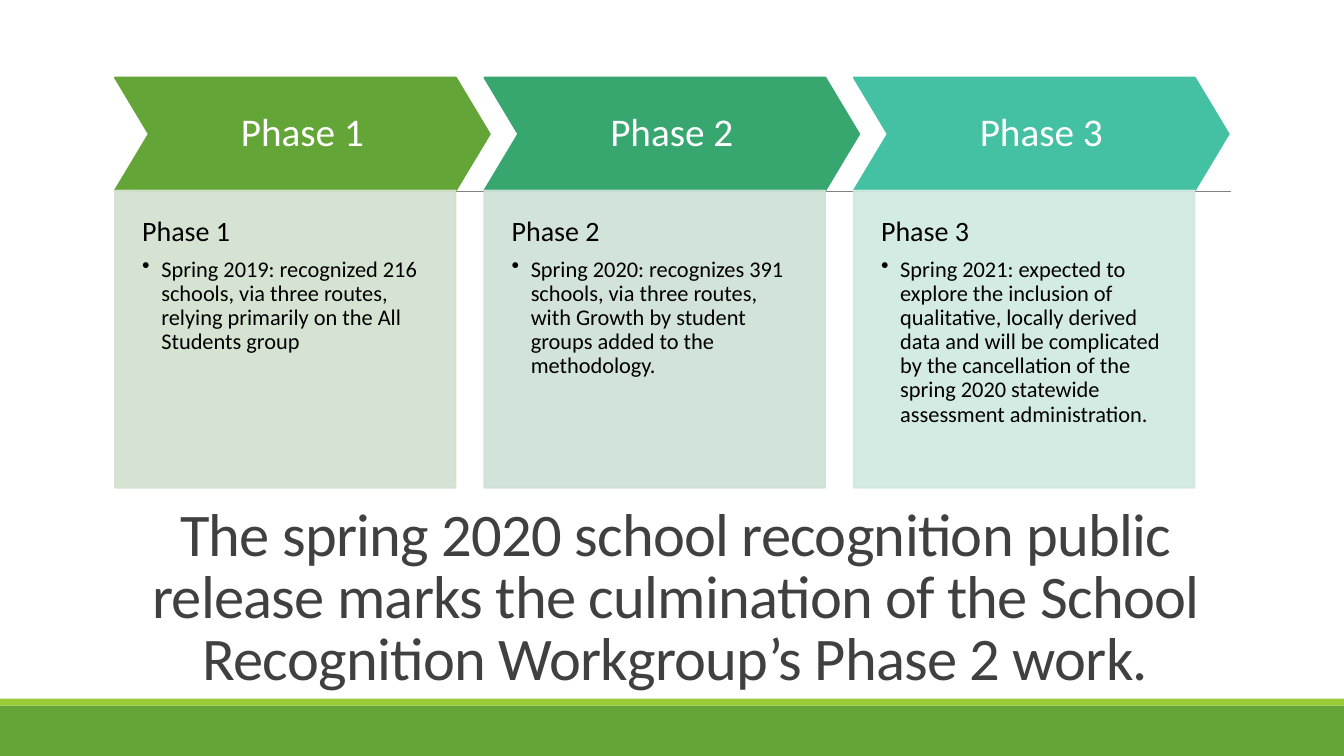
from dataclasses import dataclass

from lxml import etree
from pptx import Presentation
from pptx.dml.color import RGBColor
from pptx.enum.shapes import MSO_CONNECTOR, MSO_SHAPE
from pptx.enum.text import MSO_ANCHOR, PP_ALIGN
from pptx.oxml.ns import qn
from pptx.shapes.autoshape import Shape
from pptx.slide import Slide
from pptx.text.text import TextFrame
from pptx.util import Emu, Inches, Pt

RECTANGLE, CHEVRON = MSO_SHAPE.RECTANGLE, MSO_SHAPE.CHEVRON
STRAIGHT = MSO_CONNECTOR.STRAIGHT
TOP, MIDDLE = MSO_ANCHOR.TOP, MSO_ANCHOR.MIDDLE
LEFT, CENTER = PP_ALIGN.LEFT, PP_ALIGN.CENTER

SLIDE_WIDTH, SLIDE_HEIGHT = Inches(13.33), Inches(7.5)
FONT = "Calibri"
COLORS = {
    "footer": "63A537", "stripe": "99CB38", "rule": "808080",
    "title": "404040", "header": "FFFFFF", "body": "000000",
}
TITLE = ("The spring 2020 school recognition public release marks the "
         "culmination of the School Recognition Workgroup’s Phase 2 work.")


@dataclass(frozen=True)
class Area:
    """A box in percent of the slide's width and height."""
    left: float
    top: float
    width: float
    height: float

    def box(self, column: int = 0) -> tuple[Emu, Emu, Emu, Emu]:
        left = self.left + column * COLUMN_PITCH
        return (across(left), down(self.top), across(self.width), down(self.height))


@dataclass(frozen=True)
class Phase:
    name: str
    detail: str
    chevron_color: str
    panel_color: str


COLUMN_PITCH = 27.49
CHEVRON_AREA = Area(8.55, 10.27, 27.9, 14.93)
PANEL_AREA = Area(8.55, 25.2, 25.35, 39.33)
TITLE_AREA = Area(9, 70.67, 82.5, 17.33)
FOOTER_AREA = Area(0, 93.33, 100, 6.67)
STRIPE_AREA = Area(0, 92.4, 100, 0.93)
RULE_AREA = Area(9.83, 25.33, 81.77, 0)

PHASES = [
    Phase("Phase 1", "Spring 2019: recognized 216 schools, via three routes, relying "
          "primarily on the All Students group", "63A537", "D3E1CE"),
    Phase("Phase 2", "Spring 2020: recognizes 391 schools, via three routes, with "
          "Growth by student groups added to the methodology.", "37A76F", "CEE1D5"),
    Phase("Phase 3", "Spring 2021: expected to explore the inclusion of qualitative, "
          "locally derived data and will be complicated by the cancellation of the "
          "spring 2020 statewide assessment administration.", "44C1A3", "CFE9E0"),
]


def across(percent: float) -> Emu:
    return Emu(round(SLIDE_WIDTH * percent / 100))


def down(percent: float) -> Emu:
    return Emu(round(SLIDE_HEIGHT * percent / 100))


def add_block(slide: Slide, kind: int, area: Area, color: str,
              column: int = 0, outlined: bool = True) -> Shape:
    shape = slide.shapes.add_shape(kind, *area.box(column))
    shape.shadow.inherit = False
    shape.fill.solid()
    shape.fill.fore_color.rgb = RGBColor.from_string(color)
    if outlined:
        shape.line.color.rgb = RGBColor.from_string(color)
        shape.line.width = Pt(1.25)
    else:
        shape.line.fill.background()
    return shape


def set_opacity(shape: Shape, percent: int) -> None:
    """Apply one opacity to both the fill and the outline."""
    for color in shape.element.spPr.iter(qn("a:srgbClr")):
        etree.SubElement(color, qn("a:alpha"), val=str(percent * 1000))


def set_frame(frame: TextFrame, anchor: MSO_ANCHOR, side: float, bottom: float) -> None:
    """Wrap the text, with margins in inches."""
    frame.word_wrap = True
    frame.vertical_anchor = anchor
    frame.margin_left = frame.margin_right = frame.margin_top = Inches(side)
    frame.margin_bottom = Inches(bottom)


def write(frame: TextFrame, index: int, text: str, size: float, color: str,
          alignment: PP_ALIGN, line_spacing: float = 0.9, space_after: float = 0):
    paragraph = frame.paragraphs[0] if index == 0 else frame.add_paragraph()
    paragraph.text = text
    paragraph.alignment = alignment
    paragraph.line_spacing = line_spacing
    paragraph.space_after = Pt(space_after)
    paragraph.font.name = FONT
    paragraph.font.size = Pt(size)
    paragraph.font.color.rgb = RGBColor.from_string(COLORS[color])
    return paragraph


def add_phase(slide: Slide, column: int, phase: Phase) -> None:
    chevron = add_block(slide, CHEVRON, CHEVRON_AREA, phase.chevron_color, column)
    chevron.adjustments[0] = 0.3
    set_frame(chevron.text_frame, MIDDLE, 0.14, 0.14)
    write(chevron.text_frame, 0, phase.name, 28, "header", CENTER)

    panel = add_block(slide, RECTANGLE, PANEL_AREA, phase.panel_color, column)
    set_opacity(panel, 90)
    set_frame(panel.text_frame, TOP, 0.27, 0.53)
    write(panel.text_frame, 0, phase.name, 20, "body", LEFT, space_after=7)
    detail = write(panel.text_frame, 1, phase.detail, 16, "body", LEFT, space_after=2.4)
    detail.level = 1
    properties = detail._p.get_or_add_pPr()
    properties.set("marL", str(Inches(0.19)))
    properties.set("indent", str(-Inches(0.19)))
    bullet = etree.Element(qn("a:buChar"), char="•")
    properties.find(qn("a:defRPr")).addprevious(bullet)


def add_rule(slide: Slide) -> None:
    left, top, width, _ = RULE_AREA.box()
    rule = slide.shapes.add_connector(STRAIGHT, left, top, left + width, top)
    rule.line.color.rgb = RGBColor.from_string(COLORS["rule"])
    rule.line.width = Pt(0.5)
    etree.SubElement(rule.element.spPr, qn("a:effectLst"))


def add_title(slide: Slide) -> None:
    frame = slide.shapes.add_textbox(*TITLE_AREA.box()).text_frame
    set_frame(frame, MIDDLE, 0.1, 0.1)
    title = write(frame, 0, TITLE, 43.2, "title", CENTER, line_spacing=0.85)
    title.runs[0].font._element.set("spc", "-50")


def main() -> None:
    presentation = Presentation()
    presentation.slide_width, presentation.slide_height = SLIDE_WIDTH, SLIDE_HEIGHT
    slide = presentation.slides.add_slide(presentation.slide_layouts[6])
    add_block(slide, RECTANGLE, FOOTER_AREA, COLORS["footer"], outlined=False)
    add_block(slide, RECTANGLE, STRIPE_AREA, COLORS["stripe"], outlined=False)
    add_rule(slide)
    add_title(slide)
    for column, phase in enumerate(PHASES):
        add_phase(slide, column, phase)
    presentation.save("out.pptx")


if __name__ == "__main__":
    main()
